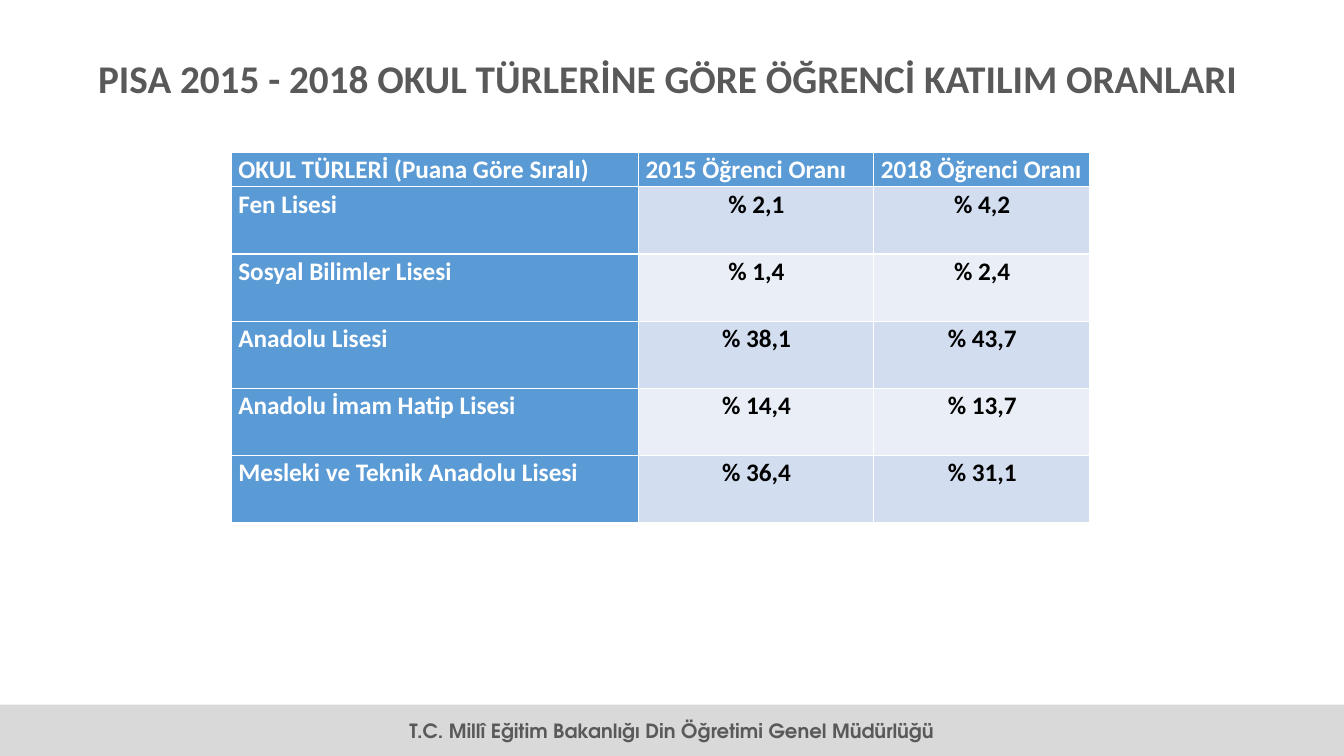
from pptx import Presentation
from pptx.dml.color import RGBColor
from pptx.enum.shapes import MSO_SHAPE
from pptx.enum.text import MSO_ANCHOR, MSO_AUTO_SIZE, PP_ALIGN
from pptx.util import Pt

PX = 9525
LEFT, CENTER = PP_ALIGN.LEFT, PP_ALIGN.CENTER
TOP, MIDDLE = MSO_ANCHOR.TOP, MSO_ANCHOR.MIDDLE
RECTANGLE = MSO_SHAPE.RECTANGLE
FIT_SHAPE = MSO_AUTO_SIZE.SHAPE_TO_FIT_TEXT
TITLE_ONLY = 5

WHITE = RGBColor(0xFF, 0xFF, 0xFF)
BLACK = RGBColor(0x00, 0x00, 0x00)
GRAY = RGBColor(0x59, 0x59, 0x59)
BAR_GRAY = RGBColor(0xD9, 0xD9, 0xD9)
BLUE = RGBColor(0x5B, 0x9B, 0xD5)
BANDS = RGBColor(0xD2, 0xDE, 0xEF), RGBColor(0xEA, 0xEF, 0xF7)

TITLE = "PISA 2015 - 2018 OKUL TÜRLERİNE GÖRE ÖĞRENCİ KATILIM ORANLARI "
FOOTER = "T.C. Millî Eğitim Bakanlığı Din Öğretimi Genel Müdürlüğü"
RATES = [
    ("OKUL TÜRLERİ (Puana Göre Sıralı)", "2015 Öğrenci Oranı", "2018 Öğrenci Oranı"),
    ("Fen Lisesi", "% 2,1", "% 4,2"),
    ("Sosyal Bilimler Lisesi", "% 1,4", "% 2,4"),
    ("Anadolu Lisesi", "% 38,1", "% 43,7"),
    ("Anadolu İmam Hatip Lisesi", "% 14,4", "% 13,7"),
    ("Mesleki ve Teknik Anadolu Lisesi", "% 36,4", "% 31,1"),
]
COLUMN_WIDTHS = 388, 224, 206
HEADER_HEIGHT, ROW_HEIGHT = 33, 64


def px(*lengths):
    return [length * PX for length in lengths]


def write(frame, text, size, color, align=CENTER, font="Calibri"):
    """Fill a text frame with one bold paragraph and return it."""
    frame.text = text
    para = frame.paragraphs[0]
    para.alignment = align
    span = para.runs[0].font
    span.name, span.size, span.bold = font, Pt(size), True
    span.color.rgb = color
    return para


def add_footer(slide):
    bar = slide.shapes.add_shape(RECTANGLE, *px(0, 671, 1280, 49))
    bar.shadow.inherit = False
    bar.fill.solid()
    bar.fill.fore_color.rgb = BAR_GRAY
    bar.line.fill.background()
    box = slide.shapes.add_textbox(*px(11, 677, 1258, 37))
    frame = box.text_frame
    frame.word_wrap = True
    frame.vertical_anchor = MIDDLE
    write(frame, FOOTER, 14, GRAY, font="TeX Gyre Adventor")


def place_title(slide):
    title = slide.shapes.title
    title.left, title.top, title.width, title.height = px(77, 47, 1126, 55)
    frame = title.text_frame
    frame.word_wrap = False
    frame.auto_size = FIT_SHAPE
    frame.vertical_anchor = TOP
    write(frame, TITLE, 28, GRAY)


def format_cell(cell, text, row, column):
    is_heading = row == 0 or column == 0
    cell.fill.solid()
    cell.fill.fore_color.rgb = BLUE if is_heading else BANDS[(row - 1) % 2]
    cell.margin_left, cell.margin_right = px(7, 6)
    cell.margin_top = cell.margin_bottom = 0
    color, align = (WHITE, LEFT) if is_heading else (BLACK, CENTER)
    write(cell.text_frame, text, 18, color, align).line_spacing = 1.07


def add_rate_table(slide):
    heights = [HEADER_HEIGHT] + [ROW_HEIGHT] * (len(RATES) - 1)
    size = sum(COLUMN_WIDTHS), sum(heights)
    frame = slide.shapes.add_table(len(RATES), len(COLUMN_WIDTHS), *px(220, 145, *size))
    table = frame.table
    table.first_col = True
    for column, width in zip(table.columns, px(*COLUMN_WIDTHS)):
        column.width = width
    for row, height in zip(table.rows, px(*heights)):
        row.height = height
    for row, texts in enumerate(RATES):
        for column, text in enumerate(texts):
            format_cell(table.cell(row, column), text, row, column)


def main():
    deck = Presentation()
    deck.slide_width, deck.slide_height = px(1280, 720)
    slide = deck.slides.add_slide(deck.slide_layouts[TITLE_ONLY])
    add_footer(slide)
    place_title(slide)
    add_rate_table(slide)
    deck.save("out.pptx")


if __name__ == "__main__":
    main()
